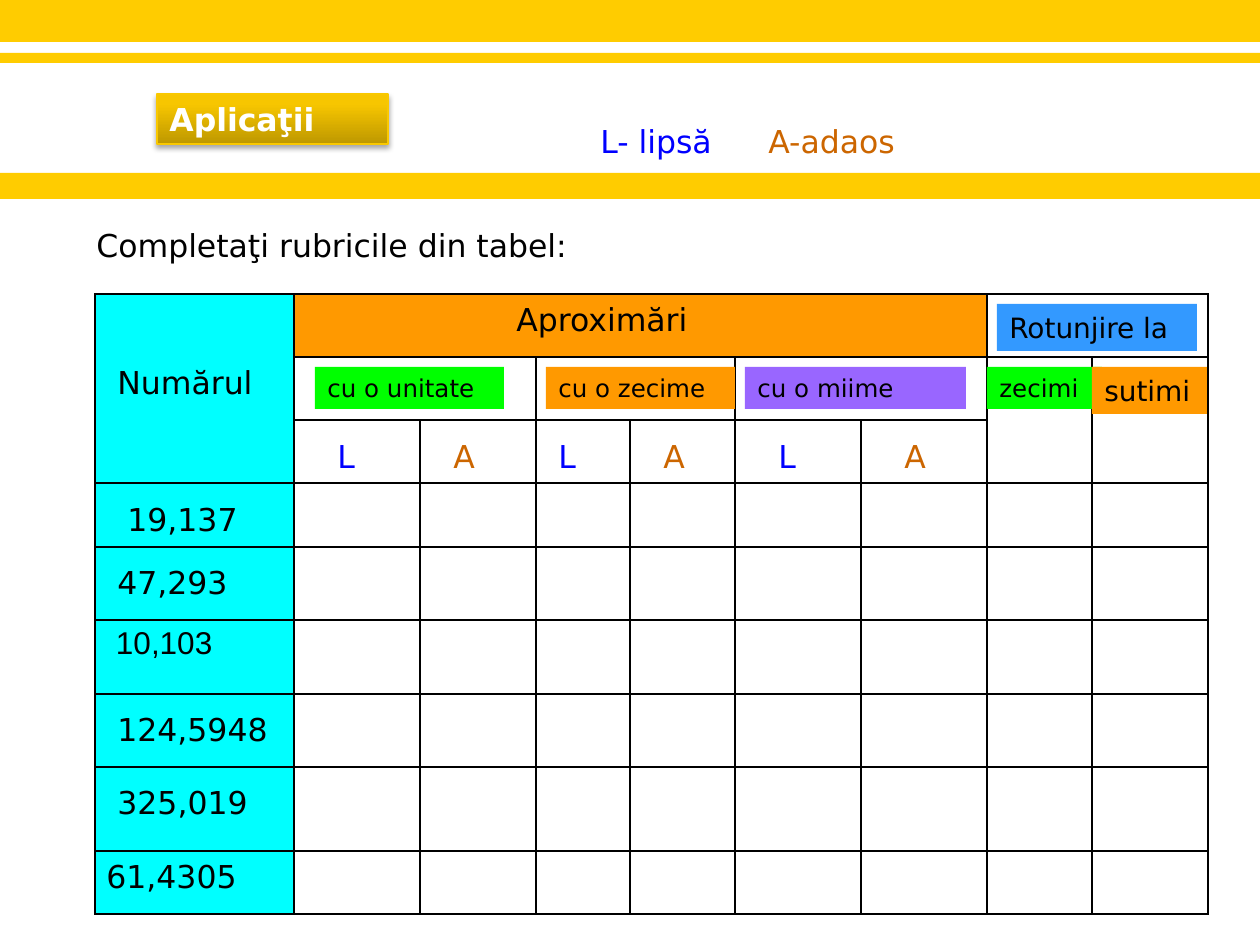
from typing import NamedTuple, Optional

from lxml.etree import SubElement
from pptx import Presentation
from pptx.dml.color import RGBColor
from pptx.enum.shapes import MSO_SHAPE
from pptx.enum.text import MSO_ANCHOR, MSO_AUTO_SIZE, PP_ALIGN
from pptx.oxml.ns import qn
from pptx.util import Emu, Pt

PX = 914400 / 126

BLACK = RGBColor(0x00, 0x00, 0x00)
WHITE = RGBColor(0xFF, 0xFF, 0xFF)
YELLOW = RGBColor(0xFF, 0xCC, 0x00)
GOLD_DARK = RGBColor(0xBE, 0x98, 0x00)
GOLD = RGBColor(0xF7, 0xC6, 0x00)
GOLD_LINE = RGBColor(0xF9, 0xC8, 0x00)
CYAN = RGBColor(0x00, 0xFF, 0xFF)
ORANGE = RGBColor(0xFF, 0x99, 0x00)
GREEN = RGBColor(0x00, 0xFF, 0x00)
SKY = RGBColor(0x33, 0x99, 0xFF)
PURPLE = RGBColor(0x99, 0x66, 0xFF)
BLUE = RGBColor(0x00, 0x00, 0xFF)
BROWN = RGBColor(0xCC, 0x66, 0x00)

FONT = "DejaVu Sans"
BOX_HEIGHTS = {18: 50, 16: 47, 14: 42}

COLUMN_WIDTHS = [199, 126, 116, 94, 105, 126, 126, 105, 116]
ROW_HEIGHTS = [63, 63, 63, 64, 73, 74, 73, 84, 63]
HEADER_ROWS = 3
MERGES = [  # first row, first column, last row, last column
    (0, 0, 2, 0), (0, 1, 0, 6), (0, 7, 0, 8),
    (1, 1, 1, 2), (1, 3, 1, 4), (1, 5, 1, 6),
    (1, 7, 2, 7), (1, 8, 2, 8),
]


class Label(NamedTuple):
    text: str
    left: int
    top: int
    width: int
    size: int = 18
    color: RGBColor = BLACK
    fill: Optional[RGBColor] = None


TITLE = Label("Aplicaţii", 157, 94, 231, color=WHITE, fill=GOLD)
PROMPT = Label("Completaţi rubricile din tabel:", 84, 220, 525)
HEADINGS = [
    Label("Numărul", 105, 357, 179),
    Label("Aproximări", 504, 294, 231),
    Label("Rotunjire la", 997, 304, 200, 16, fill=SKY),
    Label("zecimi", 987, 367, 115, 14, fill=GREEN),
    Label("cu o unitate", 315, 367, 189, 14, fill=GREEN),
    Label("cu o zecime", 546, 367, 189, 14, fill=ORANGE),
    Label("cu o miime", 745, 367, 221, 14, fill=PURPLE),
    Label("sutimi", 1092, 367, 115, 16, fill=ORANGE),
]
LETTER_PAIRS = [(325, 441), (546, 651), (766, 892)]
NUMBERS = [
    Label("19,137", 115, 494, 147),
    Label("47,293", 105, 557, 189),
    Label("124,5948", 105, 704, 189),
    Label("325,019", 105, 777, 210),
    Label("61,4305", 94, 851, 221),
]
LEGEND = [
    Label("L- lipsă", 588, 116, 242, color=BLUE),
    Label("A-adaos", 756, 116, 200, color=BROWN),
]


def px(value: int) -> Emu:
    return Emu(round(value * PX))


def add_band(page, top: int, height: int) -> None:
    band = page.shapes.add_shape(MSO_SHAPE.RECTANGLE, 0, px(top), px(1260), px(height))
    band.shadow.inherit = False
    band.fill.solid()
    band.fill.fore_color.rgb = YELLOW
    band.line.fill.background()


def add_label(page, label: Label):
    place = [px(n) for n in (label.left, label.top, label.width, BOX_HEIGHTS[label.size])]
    if label.fill is None:
        box = page.shapes.add_textbox(*place)
    else:
        box = page.shapes.add_shape(MSO_SHAPE.RECTANGLE, *place)
        box.shadow.inherit = False
        box.fill.solid()
        box.fill.fore_color.rgb = label.fill
        box.line.fill.background()
    frame = box.text_frame
    frame.word_wrap = True
    frame.auto_size = MSO_AUTO_SIZE.SHAPE_TO_FIT_TEXT
    frame.vertical_anchor = MSO_ANCHOR.TOP
    para = frame.paragraphs[0]
    para.text = label.text
    para.alignment = PP_ALIGN.LEFT
    para.font.name = FONT
    para.font.size = Pt(label.size)
    para.font.color.rgb = label.color
    return box


def add_title(page) -> None:
    box = add_label(page, TITLE)
    box.text_frame.paragraphs[0].font.bold = True
    box.fill.gradient()
    box.fill.gradient_angle = 90
    for stop, (position, color) in zip(box.fill.gradient_stops, [(0, GOLD_DARK), (0.8, GOLD)]):
        stop.position = position
        stop.color.rgb = color
    box.line.color.rgb = GOLD_LINE
    box.line.width = Pt(0.75)
    # Soft shadow below the title
    effects = box._element.spPr.find(qn("a:effectLst"))
    shadow = SubElement(effects, qn("a:outerShdw"), blurRad=str(Pt(3.1)), dist=str(Pt(1.8)),
                        dir="5400000", rotWithShape="0")
    color = SubElement(shadow, qn("a:srgbClr"), val=str(BLACK))
    SubElement(color, qn("a:alpha"), val="35000")


def set_borders(cell, row: int, column: int) -> None:
    body = row >= HEADER_ROWS
    widths = {
        "L": 1.5 if row and column == 8 else 1,
        "R": 1.5 if row and column == 7 else 1,
        "T": 1.5 if row > HEADER_ROWS else 1,
        "B": 1.5 if body and row < len(ROW_HEIGHTS) - 1 else 1,
    }
    properties = cell._tc.get_or_add_tcPr()
    for side, width in widths.items():
        line = SubElement(properties, qn(f"a:ln{side}"), w=str(Pt(width)))
        SubElement(SubElement(line, qn("a:solidFill")), qn("a:srgbClr"), val=str(BLACK))


def add_grid(page) -> None:
    rows, columns = len(ROW_HEIGHTS), len(COLUMN_WIDTHS)
    table = page.shapes.add_table(rows, columns, px(95), px(294), px(sum(COLUMN_WIDTHS)),
                                  px(sum(ROW_HEIGHTS))).table
    table.first_row = table.horz_banding = False
    for column, width in zip(table.columns, COLUMN_WIDTHS):
        column.width = px(width)
    for row, height in zip(table.rows, ROW_HEIGHTS):
        row.height = px(height)
    for top, left, bottom, right in MERGES:
        table.cell(top, left).merge(table.cell(bottom, right))
    for row in range(rows):
        for column in range(columns):
            cell = table.cell(row, column)
            set_borders(cell, row, column)
            if column == 0 or (row == 0 and column < 7):
                cell.fill.solid()
                cell.fill.fore_color.rgb = CYAN if column == 0 else ORANGE
            else:
                cell.fill.background()
    # The one number typed in the table itself
    cell = table.cell(5, 0)
    cell.text = "10,103"
    cell.margin_left = px(21)
    font = cell.text_frame.paragraphs[0].font
    font.name = "Arial"
    font.size = Pt(18)
    font.color.rgb = BLACK


def main() -> None:
    deck = Presentation()
    deck.slide_width, deck.slide_height = px(1260), px(945)
    page = deck.slides.add_slide(deck.slide_layouts[6])

    # Header
    for top, height in [(0, 42), (173, 26), (53, 10)]:
        add_band(page, top, height)
    add_title(page)
    add_label(page, PROMPT)

    # Table and the labels on it
    add_grid(page)
    letters = [Label(text, left, 431, width, color=color)
               for pair in LETTER_PAIRS
               for text, left, width, color in zip("LA", pair, (73, 63), (BLUE, BROWN))]
    for label in HEADINGS + letters + NUMBERS + LEGEND:
        add_label(page, label)

    deck.save("out.pptx")


if __name__ == "__main__":
    main()
